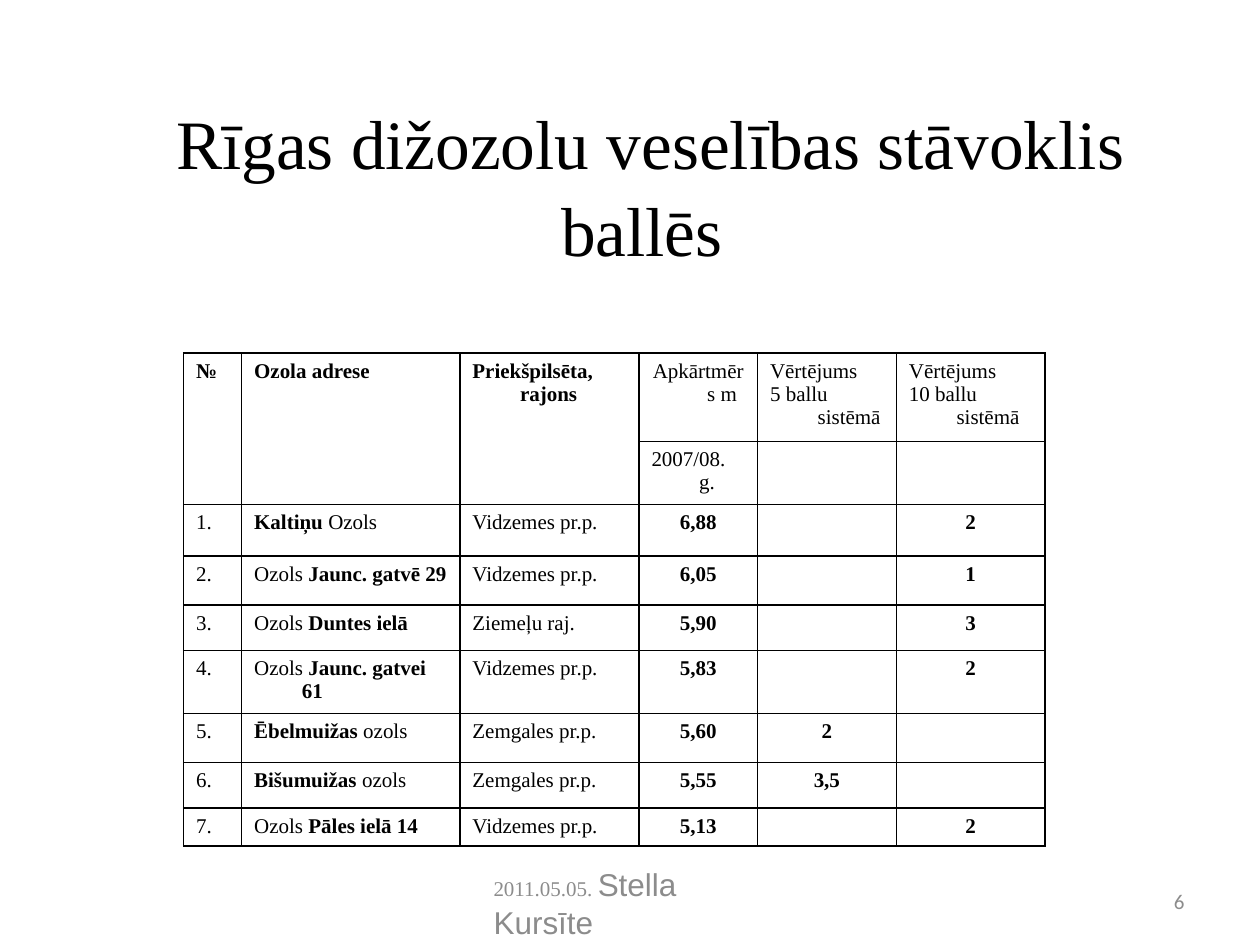
import pptx
import pptx.util
import pptx.dml.color
import pptx.enum.text
import pptx.oxml.ns
import lxml.etree

Cm = pptx.util.Cm
Pt = pptx.util.Pt
Align = pptx.enum.text.PP_ALIGN
Anchor = pptx.enum.text.MSO_ANCHOR

COLORS = {"ink": "000000", "gray": "8C8C8C"}
SERIF = "Times New Roman"

TITLE = "Rīgas dižozolu veselības stāvoklis ballēs "
DATE = "2011.05.05. "
AUTHOR = "Stella Kursīte"
PAGE = "6"

HEADS = [
    ("№", Align.LEFT, True),
    ("Ozola adrese ", Align.JUSTIFY, True),
    ("Priekšpilsēta, rajons", Align.JUSTIFY, True),
    ("Apkārtmērs m", Align.CENTER, False),
    ("Vērtējums\n5 ballu sistēmā", Align.LEFT, False),
    ("Vērtējums\n10 ballu sistēmā", Align.LEFT, False),
]
YEAR = "2007/08. g."
OAKS = [
    ([("Kaltiņu ", True), ("Ozols", False)], "Vidzemes pr.p.", "6,88", "", "2"),
    ([("Ozols ", False), ("Jaunc. gatvē 29", True)], "Vidzemes pr.p.", "6,05", "", "1"),
    ([("Ozols ", False), ("Duntes ielā", True)], "Ziemeļu raj.", "5,90", "", "3"),
    ([("Ozols ", False), ("Jaunc. gatvei 61", True)], "Vidzemes pr.p.", "5,83", "", "2"),
    ([("Ēbelmuižas", True), (" ozols", False)], "Zemgales pr.p.", "5,60", "2", ""),
    ([("Bišumuižas ", True), ("ozols", False)], "Zemgales pr.p.", "5,55", "3,5", ""),
    ([("Ozols", False), (" Pāles ielā 14", True)], "Vidzemes pr.p.", "5,13", "", "2"),
]
WIDTHS = [1.17, 4.4, 3.61, 2.39, 2.8, 3.0]
HEIGHTS = [1.67, 1.2, 1.04, 0.99, 0.91, 1.19, 0.99, 0.92, 0.72]


def write(para, text, size=12, font=SERIF, color="ink", bold=False, align=None):
    if align is not None:
        para.alignment = align
    run = para.add_run()
    run.text = text
    run.font.size = Pt(size)
    run.font.name = font
    run.font.bold = bold
    run.font.color.rgb = pptx.dml.color.RGBColor.from_string(COLORS[color])


def add_box(slide, left, top, width, height):
    frame = slide.shapes.add_textbox(Cm(left), Cm(top), Cm(width), Cm(height)).text_frame
    frame.word_wrap = True
    frame.vertical_anchor = Anchor.MIDDLE
    return frame.paragraphs[0]


def hang(para):
    props = para._p.get_or_add_pPr()
    props.set("marL", str(Cm(0.96)))
    props.set("indent", str(-Cm(0.96)))


def fill_cell(cell, runs, align=Align.LEFT):
    para = cell.text_frame.paragraphs[0]
    para.font.size = Pt(12)
    hang(para)
    for text, bold in runs:
        for i, line in enumerate(text.split("\n")):
            if i:
                para = cell.text_frame.add_paragraph()
                hang(para)
            if line:
                write(para, line, bold=bold, align=align)


def style_cell(cell):
    qn = pptx.oxml.ns.qn
    props = cell._tc.get_or_add_tcPr()
    for side in ("a:lnL", "a:lnR", "a:lnT", "a:lnB"):
        line = lxml.etree.SubElement(props, qn(side), w=str(Pt(1)))
        fill = lxml.etree.SubElement(line, qn("a:solidFill"))
        lxml.etree.SubElement(fill, qn("a:srgbClr"), val=COLORS["ink"])
    cell.fill.background()


def add_grid(slide):
    frame = slide.shapes.add_table(
        len(HEIGHTS), len(WIDTHS), Cm(3.7), Cm(7.12), Cm(sum(WIDTHS)), Cm(sum(HEIGHTS)))
    grid = frame.table
    grid.first_row = False
    grid.horz_banding = False
    for col, width in zip(grid.columns, WIDTHS):
        col.width = Cm(width)
    for row, height in zip(grid.rows, HEIGHTS):
        row.height = Cm(height)
    for cell in grid.iter_cells():
        style_cell(cell)

    for c, (text, align, bold) in enumerate(HEADS):
        if c < 3:
            grid.cell(0, c).merge(grid.cell(1, c))
        else:
            fill_cell(grid.cell(1, c), [(YEAR if c == 3 else "", False)], Align.JUSTIFY)
        fill_cell(grid.cell(0, c), [(text, bold)], align)

    for n, (name, area, *marks) in enumerate(OAKS, 1):
        row = n + 1
        fill_cell(grid.cell(row, 0), [(f"{n}.", False)])
        fill_cell(grid.cell(row, 1), name)
        fill_cell(grid.cell(row, 2), [(area, False)])
        for c, mark in enumerate(marks, 3):
            fill_cell(grid.cell(row, c), [(mark, True)], Align.CENTER)


def main():
    deck = pptx.Presentation()
    deck.slide_width = Cm(25.4)
    deck.slide_height = Cm(19.05)
    slide = deck.slides.add_slide(deck.slide_layouts[6])

    foot = add_box(slide, 9.7, 17.73, 5.92, 0.94)
    write(foot, DATE, color="gray")
    write(foot, AUTHOR, size=18, font="Arial", color="gray")
    page = add_box(slide, 18.2, 17.66, 5.93, 1.01)
    write(page, PAGE, font="Calibri", color="gray", align=Align.RIGHT)
    head = add_box(slide, 2.1, 2.1, 22.03, 3.18)
    head.line_spacing = 1.05
    write(head, TITLE, size=39.6, align=Align.CENTER)

    add_grid(slide)
    deck.save("out.pptx")


if __name__ == "__main__":
    main()
